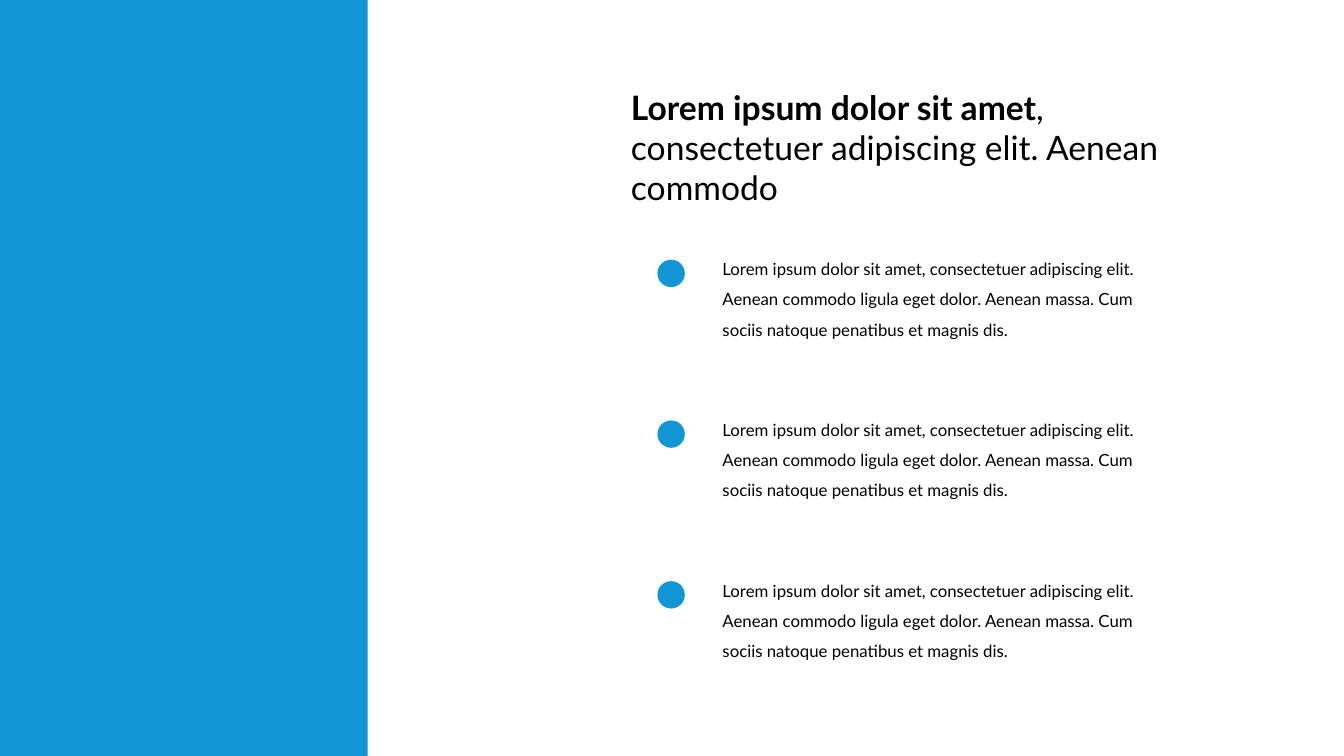
from dataclasses import dataclass

from pptx import Presentation
from pptx.dml.color import RGBColor
from pptx.enum.shapes import MSO_SHAPE as Shape
from pptx.enum.text import MSO_ANCHOR as Anchor, MSO_AUTO_SIZE as AutoSize, PP_ALIGN as Align
from pptx.util import Pt

BLUE = RGBColor(0x12, 0x96, 0xD6)
BLACK = RGBColor(0x00, 0x00, 0x00)
FONT = "Lato"
SLIDE_W, SLIDE_H = 960, 540
ITEM_TEXT = ("Lorem ipsum dolor sit amet, consectetuer adipiscing elit. "
             "Aenean commodo ligula eget dolor. Aenean massa. "
             "Cum sociis natoque penatibus et magnis dis.")
ITEM_COUNT, ITEM_TOP, ITEM_STEP = 3, 174.2, 114.8
DOT_DROP = 11.3


@dataclass(frozen=True)
class Box:
    left: float
    top: float
    width: float
    height: float

    def lengths(self) -> tuple:
        return Pt(self.left), Pt(self.top), Pt(self.width), Pt(self.height)


@dataclass(frozen=True)
class Run:
    text: str
    size: float
    bold: bool = False


def set_all(target, values: dict) -> None:
    for name, value in values.items():
        setattr(target, name, value)


def add_filled(s, kind: Shape, box: Box) -> None:
    sp = s.shapes.add_shape(kind, *box.lengths())
    sp.shadow.inherit = False
    sp.fill.solid()
    sp.fill.fore_color.rgb = BLUE
    sp.line.fill.background()


def write(sp, runs: list[Run], line_spacing: float) -> None:
    tf = sp.text_frame
    set_all(tf, {"word_wrap": True, "auto_size": AutoSize.SHAPE_TO_FIT_TEXT,
                 "vertical_anchor": Anchor.TOP})
    p = tf.paragraphs[0]
    set_all(p, {"alignment": Align.LEFT, "line_spacing": line_spacing})
    for run in runs:
        r = p.add_run()
        r.text = run.text
        set_all(r.font, {"name": FONT, "size": Pt(run.size), "bold": run.bold})
        r.font.color.rgb = BLACK


def add_item(s, top: float) -> None:
    add_filled(s, Shape.OVAL, Box(469.6, top + DOT_DROP, 19.6, 19.6))
    sp = s.shapes.add_textbox(*Box(509, top, 337, 72.7).lengths())
    write(sp, [Run(ITEM_TEXT, 12)], 1.5)


def main() -> None:
    prs = Presentation()
    set_all(prs, {"slide_width": Pt(SLIDE_W), "slide_height": Pt(SLIDE_H)})
    s = prs.slides.add_slide(prs.slide_layouts[5])

    # Side panel
    add_filled(s, Shape.RECTANGLE, Box(0, 0, 262.6, SLIDE_H))

    # Title
    title = s.shapes.title
    left, top, width, height = Box(443.5, 58.3, 423.4, 94.3).lengths()
    set_all(title, {"left": left, "top": top, "width": width, "height": height})
    write(title, [Run("Lorem ipsum dolor sit amet", 24, True),
                  Run(", consectetuer adipiscing elit. Aenean commodo", 24)], 1.0)

    # Dotted items
    for i in range(ITEM_COUNT):
        add_item(s, ITEM_TOP + i * ITEM_STEP)

    prs.save("out.pptx")


if __name__ == "__main__":
    main()
